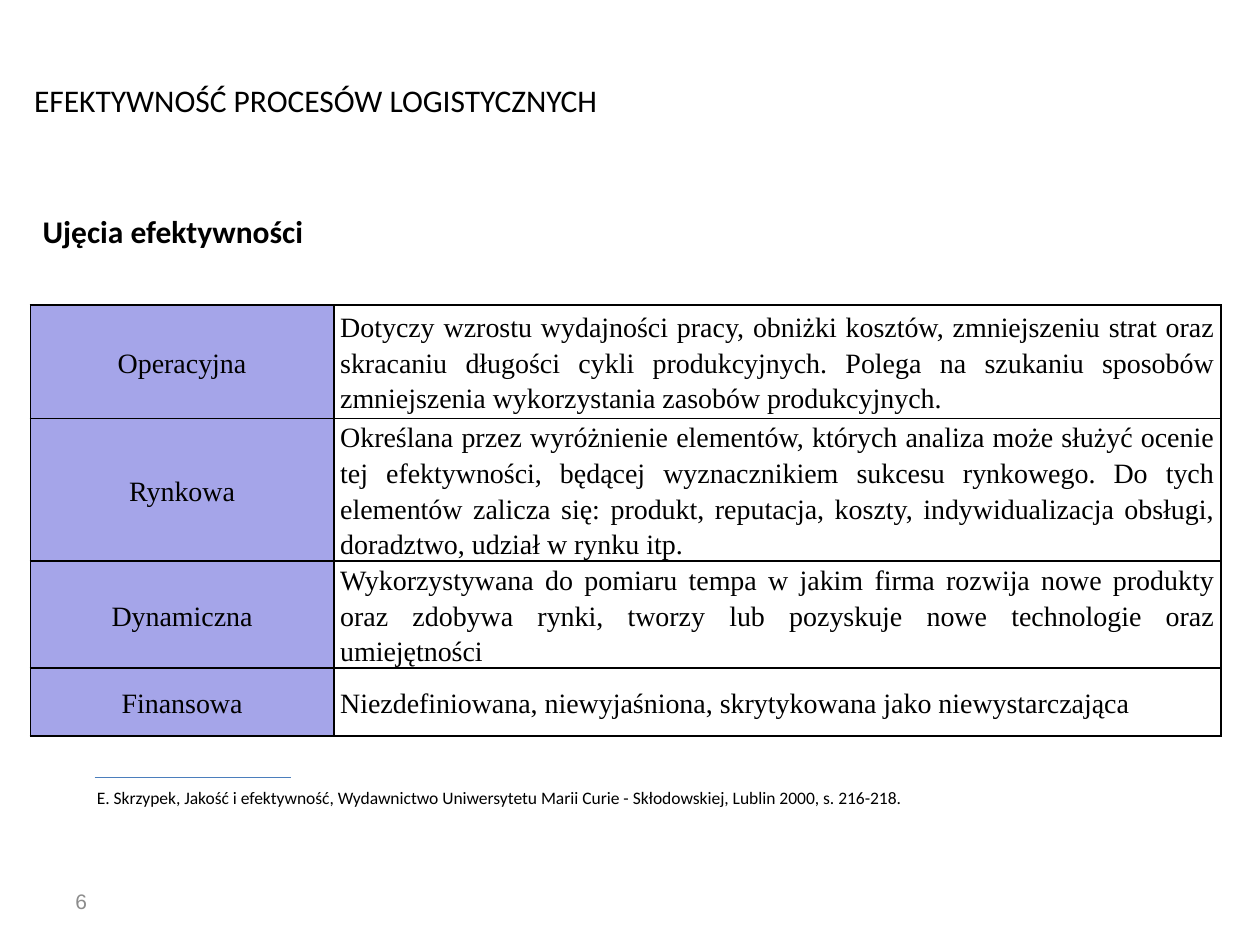
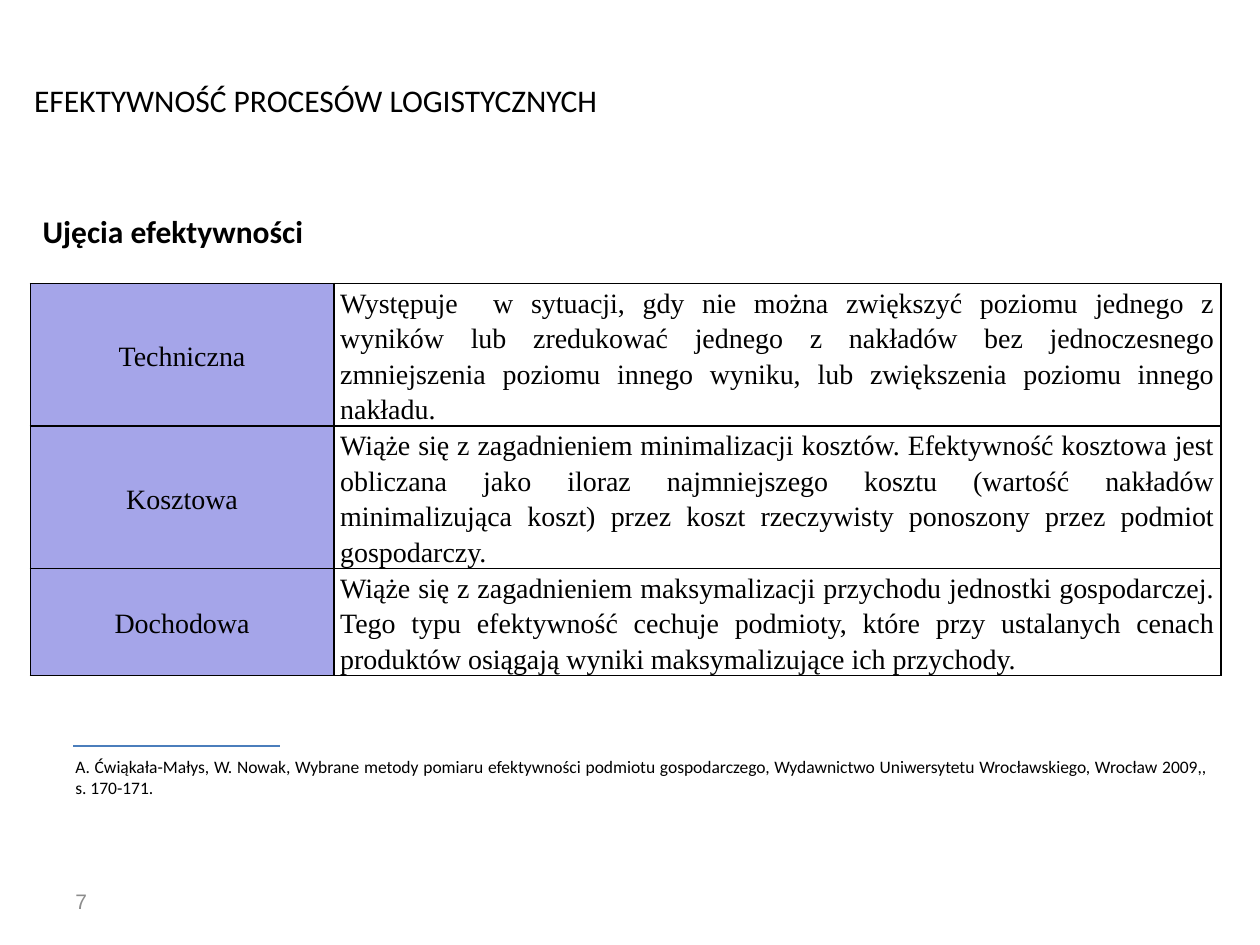
from pptx import Presentation
from pptx.dml.color import RGBColor
from pptx.enum.shapes import MSO_CONNECTOR
from pptx.enum.text import MSO_ANCHOR, MSO_AUTO_SIZE, PP_ALIGN
from pptx.oxml import parse_xml
from pptx.oxml.ns import nsdecls
from pptx.util import Inches, Pt

BLACK = RGBColor(0, 0, 0)
GREY = RGBColor(0x8C, 0x8C, 0x8C)
LILAC = RGBColor(0xA5, 0xA5, 0xE9)
BLUE = RGBColor(0x4B, 0x7E, 0xBC)

TITLE = "EFEKTYWNOŚĆ PROCESÓW LOGISTYCZNYCH"
HEAD = "Ujęcia efektywności"
COLS = (2.41, 7.04)

PAGES = [
    dict(
        num="6", top=2.42,
        rows=[
            ("Operacyjna", 0.9, "Dotyczy wzrostu wydajności pracy, obniżki kosztów, zmniejszeniu strat oraz skracaniu długości cykli produkcyjnych. Polega na szukaniu sposobów zmniejszenia wykorzystania zasobów produkcyjnych."),
            ("Rynkowa", 1.13, "Określana przez wyróżnienie elementów, których analiza może służyć ocenie tej efektywności, będącej wyznacznikiem sukcesu rynkowego. Do tych elementów zalicza się: produkt, reputacja, koszty, indywidualizacja obsługi, doradztwo, udział w rynku itp."),
            ("Dynamiczna", 0.85, "Wykorzystywana do pomiaru tempa w jakim firma rozwija nowe produkty oraz zdobywa rynki, tworzy lub pozyskuje nowe technologie oraz umiejętności"),
            ("Finansowa", 0.54, "Niezdefiniowana, niewyjaśniona, skrytykowana jako niewystarczająca"),
        ],
        note="E. Skrzypek, Jakość i efektywność, Wydawnictwo Uniwersytetu Marii Curie - Skłodowskiej, Lublin 2000, s. 216-218.",
        box=(0.67, 6.2, 8.74, 0.27), rule=(0.75, 2.31, 6.17),
    ),
    dict(
        num="7", top=2.25,
        rows=[
            ("Techniczna", 1.13, "Występuje  w sytuacji, gdy nie można zwiększyć poziomu jednego z wyników lub zredukować jednego z nakładów bez jednoczesnego zmniejszenia poziomu innego wyniku, lub zwiększenia poziomu innego nakładu."),
            ("Kosztowa", 1.13, "Wiąże się z zagadnieniem minimalizacji kosztów. Efektywność kosztowa jest obliczana jako iloraz najmniejszego kosztu (wartość nakładów minimalizująca koszt) przez koszt rzeczywisty ponoszony przez podmiot gospodarczy."),
            ("Dochodowa", 0.85, "Wiąże się z zagadnieniem maksymalizacji przychodu jednostki gospodarczej. Tego typu efektywność cechuje podmioty, które przy ustalanych cenach produktów osiągają wyniki maksymalizujące ich przychody."),
        ],
        note="A. Ćwiąkała-Małys, W. Nowak, Wybrane metody pomiaru efektywności podmiotu gospodarczego, Wydawnictwo Uniwersytetu Wrocławskiego, Wrocław 2009,, s. 170-171.",
        box=(0.5, 5.95, 9.17, 0.44), rule=(0.58, 2.22, 5.92),
    ),
]


def write(frame, text, size=18, font="Calibri", color=BLACK, bold=False,
          align=PP_ALIGN.LEFT, space=1.0):
    para = frame.paragraphs[0]
    para.alignment = align
    para.line_spacing = space
    run = para.add_run()
    run.text = text
    run.font.size = Pt(size)
    run.font.name = font
    run.font.color.rgb = color
    run.font.bold = bold


def edge(cell):
    props = cell._tc.get_or_add_tcPr()
    for i, side in enumerate(("lnL", "lnR", "lnT", "lnB")):
        props.insert(i, parse_xml(
            f'<a:{side} {nsdecls("a")} w="{Pt(1)}"><a:solidFill>'
            f'<a:srgbClr val="{BLACK}"/></a:solidFill></a:{side}>'))


prs = Presentation()
prs.slide_width = Inches(10)
prs.slide_height = Inches(7.5)

for page in PAGES:
    slide = prs.slides.add_slide(prs.slide_layouts[5])
    shapes = slide.shapes

    title = shapes.title
    title.left, title.top = Inches(0.17), Inches(0.59)
    title.width, title.height = Inches(7.83), Inches(0.4)
    title.text_frame.auto_size = MSO_AUTO_SIZE.NONE
    title.text_frame.vertical_anchor = MSO_ANCHOR.TOP
    write(title.text_frame, TITLE)

    for box, text, anchor, style in (
        ((0.24, 1.63, 9, 0.5), HEAD, MSO_ANCHOR.TOP, dict(bold=True)),
        (page["box"], page["note"], MSO_ANCHOR.TOP,
         dict(size=10, align=PP_ALIGN.JUSTIFY)),
        ((0.5, 6.95, 2.33, 0.4), page["num"], MSO_ANCHOR.MIDDLE,
         dict(size=12, font="Arial", color=GREY)),
    ):
        frame = shapes.add_textbox(*map(Inches, box)).text_frame
        frame.word_wrap = True
        frame.vertical_anchor = anchor
        write(frame, text, **style)

    rows = page["rows"]
    tall = sum(high for name, high, text in rows)
    table = shapes.add_table(len(rows), 2, Inches(0.24), Inches(page["top"]),
                             Inches(sum(COLS)), Inches(tall)).table
    table.first_row = False
    table.horz_banding = False
    for col, wide in zip(table.columns, COLS):
        col.width = Inches(wide)
    for row, (name, high, text) in zip(table.rows, rows):
        row.height = Inches(high)
        for cell, words, align in zip(row.cells, (name, text),
                                      (PP_ALIGN.CENTER, PP_ALIGN.JUSTIFY)):
            cell.margin_left = cell.margin_right = Inches(0.05)
            cell.margin_top = cell.margin_bottom = 0
            cell.vertical_anchor = MSO_ANCHOR.MIDDLE
            write(cell.text_frame, words, size=16, font="Times New Roman",
                  align=align, space=Pt(20.35))
            if align == PP_ALIGN.CENTER:
                cell.fill.solid()
                cell.fill.fore_color.rgb = LILAC
            else:
                cell.fill.background()
            edge(cell)

    start, end, y = map(Inches, page["rule"])
    rule = shapes.add_connector(MSO_CONNECTOR.STRAIGHT, start, y, end, y)
    rule.line.color.rgb = BLUE
    rule.line.width = Pt(0.75)
    rule._element.spPr.append(parse_xml(f'<a:effectLst {nsdecls("a")}/>'))

prs.save("out.pptx")
